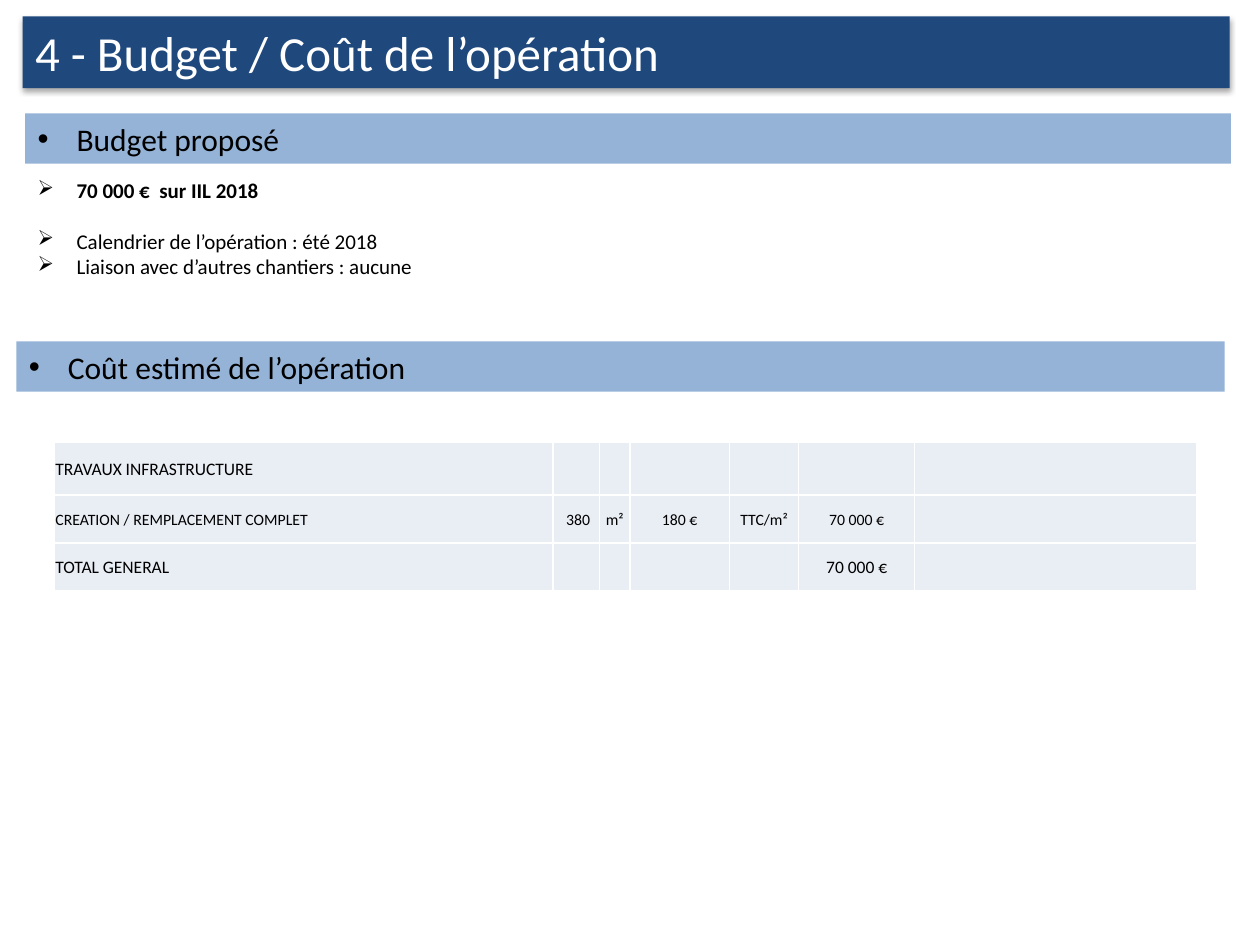
from lxml import etree
from pptx import Presentation
from pptx.dml.color import RGBColor
from pptx.enum.shapes import MSO_SHAPE
from pptx.enum.text import MSO_ANCHOR, PP_ALIGN
from pptx.oxml import parse_xml
from pptx.oxml.ns import nsdecls, qn
from pptx.util import Inches, Pt

NAVY = RGBColor(0x1F, 0x49, 0x7D)
BLUE = RGBColor(0x95, 0xB3, 0xD7)
PALE = RGBColor(0xE9, 0xED, 0xF4)
WHITE = RGBColor(0xFF, 0xFF, 0xFF)
BLACK = RGBColor(0x00, 0x00, 0x00)


def add_run(p, text, size, color=BLACK, bold=False):
    r = p.add_run()
    r.text = text
    r.font.name = "Calibri"
    r.font.size = Pt(size)
    r.font.bold = bold
    r.font.color.rgb = color


def add_bullet(p, char):
    pPr = p._p.get_or_add_pPr()
    pPr.set("marL", str(Inches(0.31)))
    pPr.set("indent", str(-Inches(0.31)))
    font = "Arial" if char == "•" else "Wingdings"
    etree.SubElement(pPr, qn("a:buFont")).set("typeface", font)
    etree.SubElement(pPr, qn("a:buChar")).set("char", "Ø" if font == "Wingdings" else char)


prs = Presentation()
prs.slide_width = Inches(10)
prs.slide_height = Inches(7.5)
s = prs.slides.add_slide(prs.slide_layouts[6])

bars = [
    ("Budget proposé", 0.2, 0.9, 9.57, 0.4, BLUE, 18, BLACK),
    ("Coût estimé de l’opération", 0.13, 2.71, 9.59, 0.4, BLUE, 18, BLACK),
    ("4 - Budget / Coût de l’opération", 0.18, 0.13, 9.58, 0.57, NAVY, 28, WHITE),
]
for text, left, top, width, height, fill, size, color in bars:
    sp = s.shapes.add_shape(MSO_SHAPE.RECTANGLE, Inches(left), Inches(top),
                            Inches(width), Inches(height))
    sp.shadow.inherit = False
    sp.fill.solid()
    sp.fill.fore_color.rgb = fill
    sp.line.fill.background()
    tf = sp.text_frame
    tf.vertical_anchor = MSO_ANCHOR.TOP
    p = tf.paragraphs[0]
    p.alignment = PP_ALIGN.LEFT
    if fill == BLUE:
        add_bullet(p, "•")
    else:
        sp._element.spPr.find(qn("a:effectLst")).append(parse_xml(
            f'<a:outerShdw {nsdecls("a")} blurRad="{Pt(3.1)}" dist="{Pt(1.8)}" '
            'dir="5400000" rotWithShape="0"><a:srgbClr val="000000">'
            '<a:alpha val="35000"/></a:srgbClr></a:outerShdw>'))
    add_run(p, text, size, color)

sp = s.shapes.add_textbox(Inches(0.2), Inches(1.36), Inches(9.53), Inches(1.11))
tf = sp.text_frame
tf.word_wrap = True
items = [
    ("70 000 €  sur IIL 2018", True, 0),
    ("Calendrier de l’opération : été 2018", False, 14.6),
    ("Liaison avec d’autres chantiers : aucune", False, 0),
]
for i, (text, bold, gap) in enumerate(items):
    p = tf.paragraphs[0] if i == 0 else tf.add_paragraph()
    p.space_before = Pt(gap)
    add_bullet(p, "➢")
    add_run(p, text, 12, bold=bold)

col_widths = [3.96, 0.37, 0.24, 0.79, 0.55, 0.92, 2.24]
row_heights = [0.42, 0.38, 0.38]
row_sizes = [10, 9, 10]
rows = [
    ["TRAVAUX INFRASTRUCTURE", "", "", "", "", "", ""],
    ["CREATION / REMPLACEMENT COMPLET", "\u00a0380", "m²", "180 €", "TTC/m²", "70 000 €", ""],
    ["TOTAL GENERAL", "", "", "", "", "70 000 €", ""],
]
table = s.shapes.add_table(len(rows), len(col_widths), Inches(0.43), Inches(3.51),
                           Inches(9.07), Inches(1.18)).table
table.first_row = False
table.horz_banding = False
for col, width in zip(table.columns, col_widths):
    col.width = Inches(width)
for row, height, size, texts in zip(table.rows, row_heights, row_sizes, rows):
    row.height = Inches(height)
    for j, (cell, text) in enumerate(zip(row.cells, texts)):
        cell.fill.solid()
        cell.fill.fore_color.rgb = PALE
        cell.vertical_anchor = MSO_ANCHOR.MIDDLE
        cell.margin_left = cell.margin_right = cell.margin_top = Inches(0.01)
        cell.margin_bottom = 0
        if text:
            p = cell.text_frame.paragraphs[0]
            p.alignment = PP_ALIGN.CENTER if j else PP_ALIGN.LEFT
            if size == 9:
                p.line_spacing = 1.02
            add_run(p, text, size)

prs.save("out.pptx")
